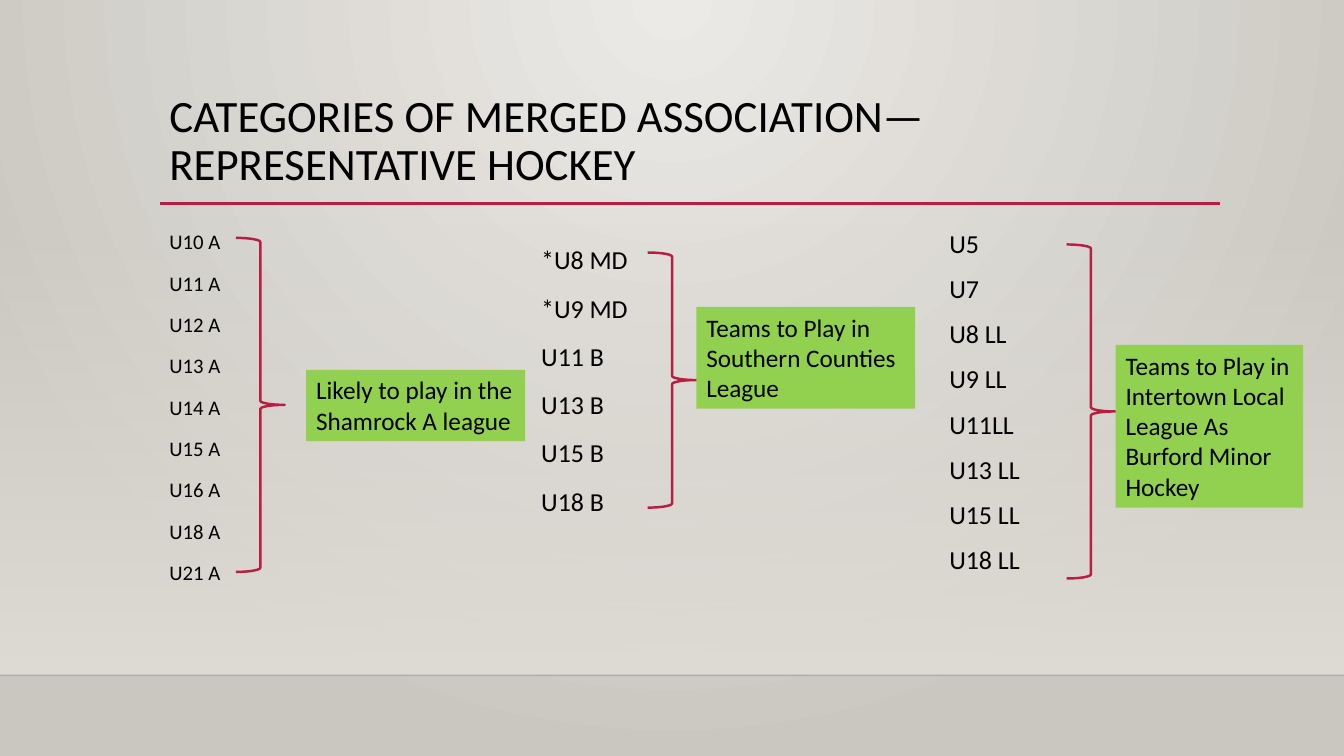
from lxml.etree import SubElement
from pptx import Presentation
from pptx.dml.color import RGBColor
from pptx.enum.shapes import MSO_CONNECTOR, MSO_SHAPE
from pptx.enum.text import MSO_ANCHOR, MSO_AUTO_SIZE, PP_ALIGN
from pptx.oxml.ns import qn
from pptx.util import Pt

TITLE = "CATEGORIES OF MERGED ASSOCIATION—REPRESENTATIVE HOCKEY"
TITLE_BOX = (113.8, 63.4, 756, 83.5)
GROUPS = [
    {
        "teams": ["U10 A", "U11 A", "U12 A", "U13 A", "U14 A", "U15 A", "U16 A", "U18 A", "U21 A"],
        "teams_box": (113.8, 158.4, 170.6, 271.4),
        "size": 14.8, "spacing": 1.1,
        "brace_box": (168.5, 169.9, 34.9, 238.6),
        "league": "Likely to play in the Shamrock A league",
        "league_box": (218.7, 264.2, 156.4, 50.9),
    },
    {
        "teams": ["*U8 MD", "*U9 MD", "U11 B", "U13 B", "U15 B", "U18 B"],
        "teams_box": (379.4, 168.5, 100.8, 270.7),
        "size": 18.5, "spacing": 1.1,
        "brace_box": (462.6, 180.4, 34.9, 182.2),
        "league": "Teams to Play in Southern Counties League",
        "league_box": (497.4, 219.2, 156.4, 72.7),
    },
    {
        "teams": ["U5", "U7", "U8 LL", "U9 LL", "U11LL", "U13 LL", "U15 LL", "U18 LL"],
        "teams_box": (671, 159.1, 100.8, 270.7),
        "size": 18.5, "spacing": 1.0,
        "brace_box": (761.8, 174.6, 34.9, 238.6),
        "league": "Teams to Play in Intertown Local League As Burford Minor Hockey",
        "league_box": (796.9, 246.4, 133.9, 116.3),
    },
]
COLORS = {
    "glow": "ECEAE7", "edge": "CAC7C1", "wall": "DFDBD5", "floor": "000001",
    "accent": "B71E42", "league": "92D050", "text": "000000",
}
FONT = "Calibri"
WIDTH, HEIGHT = 960, 540
WALL_TOP, FLOOR_TOP = 159.1, 482.4
RULE_LEFT, RULE_RIGHT, RULE_Y = 114.5, 871.2, 145.4


def color(name):
    return RGBColor.from_string(COLORS[name])


def points(values):
    return [Pt(value) for value in values]


def place(shape, box):
    for side, value in zip(("left", "top", "width", "height"), points(box)):
        setattr(shape, side, value)


def write(shape, lines, size, spacing=1.0, before=0, anchor=MSO_ANCHOR.TOP):
    frame = shape.text_frame
    frame_format = {"word_wrap": True, "auto_size": MSO_AUTO_SIZE.NONE, "vertical_anchor": anchor}
    for key, value in frame_format.items():
        setattr(frame, key, value)
    frame.text = "\n".join(lines)
    for index, paragraph in enumerate(frame.paragraphs):
        properties = paragraph._p.get_or_add_pPr()
        properties.set("marL", "0")
        properties.set("indent", "0")
        SubElement(properties, qn("a:buNone"))
        paragraph_format = {
            "alignment": PP_ALIGN.LEFT,
            "line_spacing": spacing,
            "space_before": Pt(before if index else 0),
        }
        for key, value in paragraph_format.items():
            setattr(paragraph, key, value)
        paragraph.font.name = FONT
        paragraph.font.size = Pt(size)
        paragraph.font.color.rgb = color("text")


def blend(fill, names):
    fill.gradient()
    for stop, name in zip(fill.gradient_stops, names):
        stop.color.rgb = color(name)


def add_shape(slide, kind, box):
    shape = slide.shapes.add_shape(kind, *points(box))
    shape.shadow.inherit = False
    return shape


def add_line(slide, ends, name, width):
    line = slide.shapes.add_connector(MSO_CONNECTOR.STRAIGHT, *points(ends))
    line.line.color.rgb = color(name)
    line.line.width = Pt(width)
    SubElement(line.element.spPr, qn("a:effectLst"))
    return line


def add_backdrop(slide):
    blend(slide.background.fill, ("glow", "edge"))
    glow = slide.element.find(".//" + qn("a:gradFill"))
    glow.remove(glow.find(qn("a:lin")))
    circle = SubElement(glow, qn("a:path"), path="circle")
    SubElement(circle, qn("a:fillToRect"), l="43000", t="0", r="43000", b="100000")

    wall = add_shape(slide, MSO_SHAPE.RECTANGLE, (0, WALL_TOP, WIDTH, FLOOR_TOP - WALL_TOP))
    wall.line.fill.background()
    blend(wall.fill, ("wall", "wall"))
    wall.fill.gradient_angle = 270
    SubElement(wall.element.find(".//" + qn("a:srgbClr")), qn("a:alpha"), val="0")

    floor = add_line(slide, (0, FLOOR_TOP, WIDTH, FLOOR_TOP), "floor", 1)
    SubElement(floor.element.find(".//" + qn("a:srgbClr")), qn("a:alpha"), val="20000")
    add_line(slide, (RULE_LEFT, RULE_Y, RULE_RIGHT, RULE_Y), "accent", 2.5)


def add_group(slide, group, teams):
    place(teams, group["teams_box"])
    write(teams, group["teams"], group["size"], group["spacing"], 10)

    brace = add_shape(slide, MSO_SHAPE.RIGHT_BRACE, group["brace_box"])
    brace.fill.background()
    brace.line.color.rgb = color("accent")
    brace.line.width = Pt(1.75)

    league = add_shape(slide, MSO_SHAPE.RECTANGLE, group["league_box"])
    league.fill.solid()
    league.fill.fore_color.rgb = color("league")
    league.line.fill.background()
    write(league, [group["league"]], 18)


def main():
    deck = Presentation()
    deck.slide_width, deck.slide_height = points((WIDTH, HEIGHT))
    slide = deck.slides.add_slide(deck.slide_layouts[3])
    title, *team_lists = slide.placeholders
    add_backdrop(slide)
    for holder in (title, *team_lists):
        slide.shapes._spTree.append(holder.element)
    place(title, TITLE_BOX)
    write(title, [TITLE], 32, 0.9)
    team_lists.append(slide.shapes.add_textbox(*points(GROUPS[-1]["teams_box"])))
    for group, teams in zip(GROUPS, team_lists):
        add_group(slide, group, teams)
    deck.save("out.pptx")


if __name__ == "__main__":
    main()
